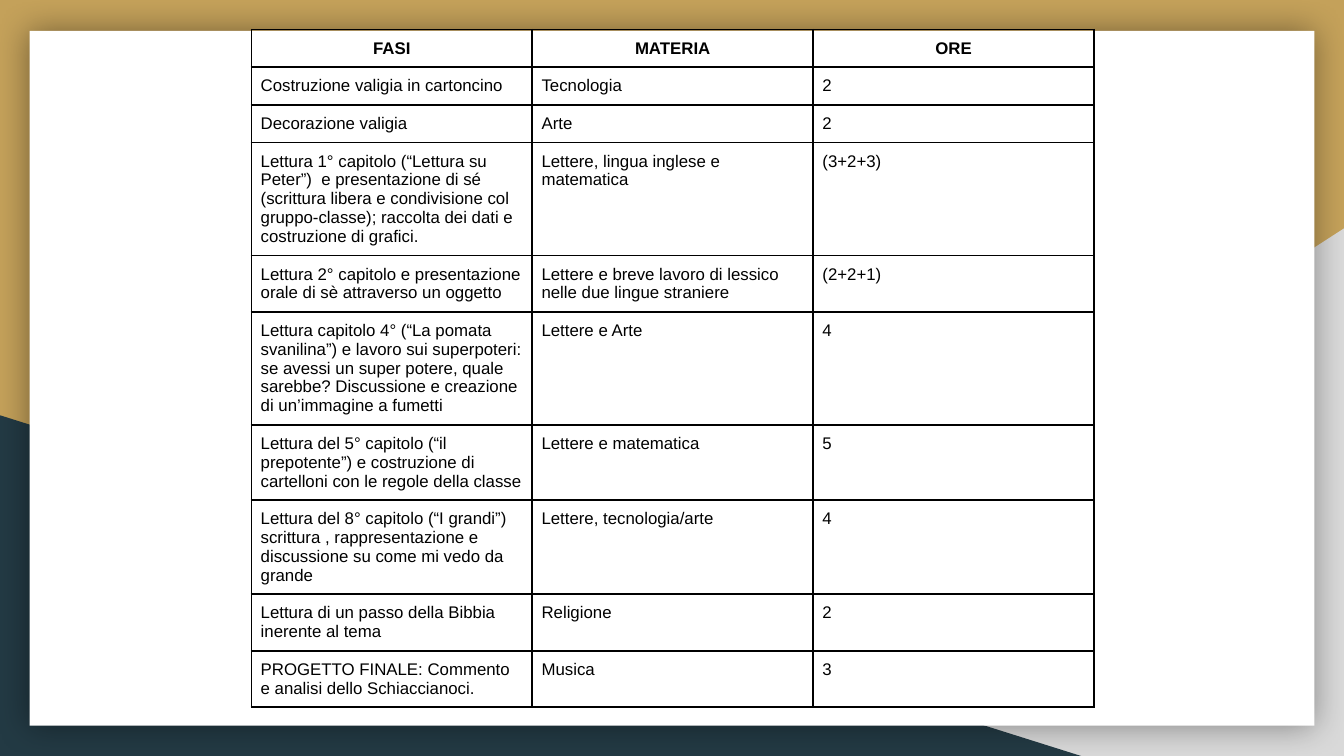
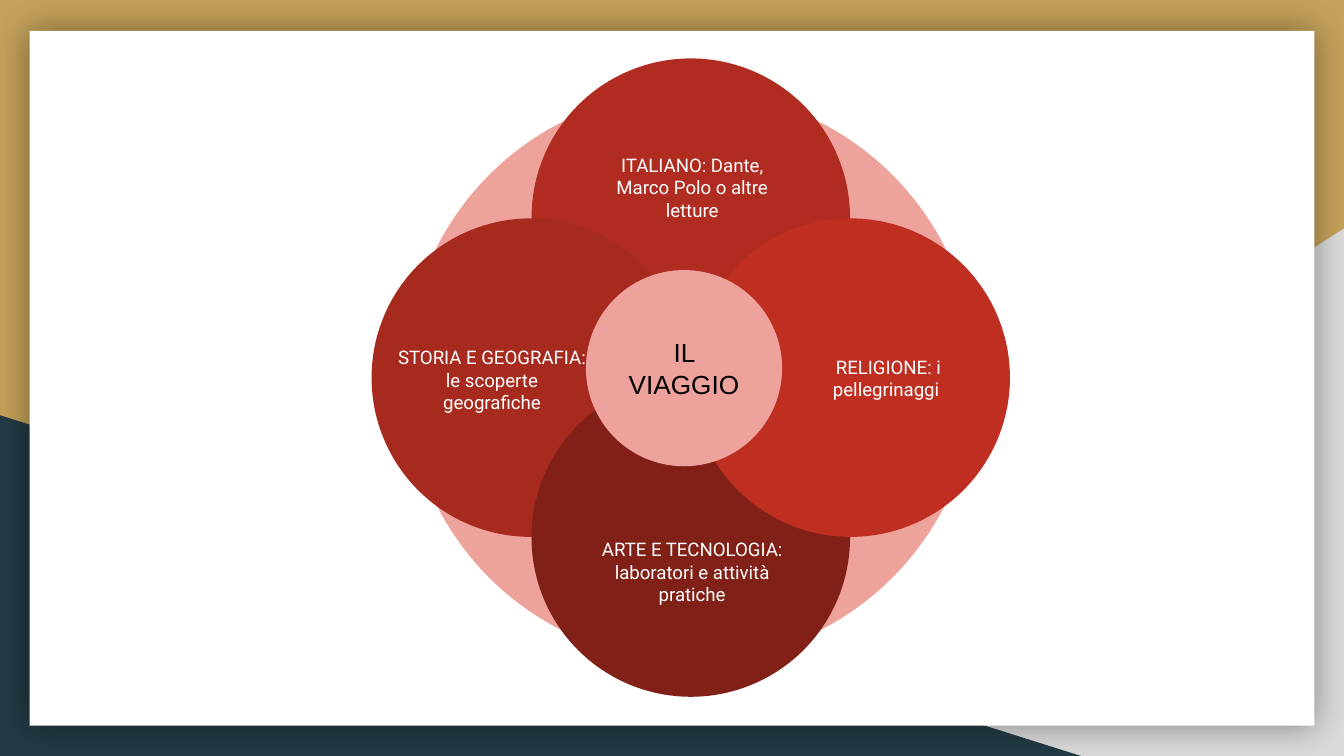
from dataclasses import dataclass

from lxml.etree import SubElement
from pptx import Presentation
from pptx.dml.color import RGBColor
from pptx.enum.shapes import MSO_SHAPE
from pptx.enum.text import MSO_ANCHOR, PP_ALIGN
from pptx.oxml import parse_xml
from pptx.oxml.ns import nsdecls, qn
from pptx.util import Inches, Pt


@dataclass(frozen=True)
class Theme:
    gold: str = "C4A15A"
    grey: str = "D9D9D9"
    navy: str = "233A44"
    white: str = "FFFFFF"
    black: str = "000000"
    pink: str = "EDA29B"
    table_font: str = "Arial"
    label_font: str = "Roboto"
    table_size: int = 9
    label_size: int = 10
    hub_size: int = 14


THEME = Theme()

HEADINGS = ("FASI", "MATERIA", "ORE")
PHASES = [
    ("Costruzione valigia in cartoncino", "Tecnologia", "2"),
    ("Decorazione valigia", "Arte", "2"),
    ("Lettura 1° capitolo (“Lettura su Peter”)  e presentazione di sé (scrittura libera e "
     "condivisione col gruppo-classe); raccolta dei dati e costruzione di grafici.",
     "Lettere, lingua inglese e matematica", "(3+2+3)"),
    ("Lettura 2° capitolo e presentazione orale di sè attraverso un oggetto",
     "Lettere e breve lavoro di lessico nelle due lingue straniere", "(2+2+1)"),
    ("Lettura capitolo 4° (“La pomata svanilina”) e lavoro sui superpoteri: se avessi un super "
     "potere, quale sarebbe? Discussione e creazione di un’immagine a fumetti",
     "Lettere e Arte", "4"),
    ("Lettura del 5° capitolo (“il prepotente”) e costruzione di cartelloni con le regole "
     "della classe", "Lettere e matematica", "5"),
    ("Lettura del 8° capitolo (“I grandi”) scrittura , rappresentazione e discussione su come "
     "mi vedo da grande", "Lettere, tecnologia/arte", "4"),
    ("Lettura di un passo della Bibbia inerente al tema", "Religione", "2"),
    ("PROGETTO FINALE: Commento e analisi dello Schiaccianoci.", "Musica", "3"),
]

HUB = "IL VIAGGIO"
PETALS = [
    ("ITALIANO: Dante, Marco Polo o altre letture", "B02C20", (0, -1), (4.33, 1.01)),
    ("STORIA E GEOGRAFIA: le scoperte geografiche", "A72A1E", (-1, 0), (2.84, 2.44)),
    ("ARTE E TECNOLOGIA: laboratori e attività pratiche", "802017", (0, 1), (4.33, 3.87)),
    ("RELIGIONE: i pellegrinaggi ", "BE2F22", (1, 0), (5.79, 2.43)),
]


def add_filled(shapes, preset, color, left, top, width, height):
    shape = shapes.add_shape(preset, Inches(left), Inches(top), Inches(width), Inches(height))
    shape.shadow.inherit = False
    shape.fill.solid()
    shape.fill.fore_color.rgb = RGBColor.from_string(color)
    shape.line.fill.background()
    return shape


def add_circle(shapes, color, center, diameter):
    left, top = (position - diameter / 2 for position in center)
    return add_filled(shapes, MSO_SHAPE.OVAL, color, left, top, diameter, diameter)


def style_paragraph(paragraph, font_name, size, color, alignment=PP_ALIGN.LEFT, bold=False):
    paragraph.alignment = alignment
    paragraph.font.name = font_name
    paragraph.font.size = Pt(size)
    paragraph.font.bold = bold
    paragraph.font.color.rgb = RGBColor.from_string(color)


def write_centered(shape, text, font_name, size, color):
    frame = shape.text_frame
    frame.text = text
    frame.word_wrap = True
    frame.vertical_anchor = MSO_ANCHOR.MIDDLE
    frame.margin_left = frame.margin_right = frame.margin_top = frame.margin_bottom = Inches(0.1)
    style_paragraph(frame.paragraphs[0], font_name, size, color, PP_ALIGN.CENTER)


def add_soft_shadow(shape):
    effects = shape.element.spPr.find(qn("a:effectLst"))
    shadow = SubElement(effects, qn("a:outerShdw"), blurRad=str(Pt(18)), dist="0",
                        dir="0", algn="ctr", rotWithShape="0")
    color = SubElement(shadow, qn("a:srgbClr"), val=THEME.black)
    SubElement(color, qn("a:alpha"), val="40000")


def decorate_layout(layout, slide):
    layout.background.fill.solid()
    layout.background.fill.fore_color.rgb = RGBColor.from_string(THEME.gold)
    right_corner = add_filled(slide.shapes, MSO_SHAPE.RIGHT_TRIANGLE, THEME.grey,
                              3.92, 1.7, 6.08, 3.93)
    right_corner.element.spPr.find(qn("a:xfrm")).set("flipH", "1")
    left_corner = add_filled(slide.shapes, MSO_SHAPE.RIGHT_TRIANGLE, THEME.navy,
                             0, 3.09, 8.06, 2.54)
    page = add_filled(slide.shapes, MSO_SHAPE.RECTANGLE, THEME.white, 0.22, 0.23, 9.56, 5.17)
    add_soft_shadow(page)
    for shape in (right_corner, left_corner, page):
        layout.shapes.element.append(shape.element)


def add_borders(cell):
    properties = cell._tc.get_or_add_tcPr()
    for index, side in enumerate(("lnL", "lnR", "lnT", "lnB")):
        properties.insert(index, parse_xml(
            f'<a:{side} {nsdecls("a")} w="{Pt(1)}"><a:solidFill>'
            f'<a:srgbClr val="{THEME.black}"/></a:solidFill></a:{side}>'))


def fill_cell(cell, text, is_heading):
    cell.text = text
    cell.fill.background()
    cell.margin_left = cell.margin_right = cell.margin_top = cell.margin_bottom = Inches(0.07)
    alignment = PP_ALIGN.CENTER if is_heading else PP_ALIGN.LEFT
    style_paragraph(cell.text_frame.paragraphs[0], THEME.table_font, THEME.table_size,
                    THEME.black, alignment, is_heading)
    add_borders(cell)


def build_phases(slide):
    rows = [HEADINGS, *PHASES]
    column_width, minimum_row_height = Inches(2.09), Inches(0.01)
    table = slide.shapes.add_table(
        len(rows), len(HEADINGS), Inches(1.87), Inches(0.22),
        column_width * len(HEADINGS), minimum_row_height * len(rows)).table
    table.first_row = table.horz_banding = False
    for row_index, row in enumerate(rows):
        for column_index, text in enumerate(row):
            fill_cell(table.cell(row_index, column_index), text, row_index == 0)


def build_journey(slide):
    center_x, center_y = 5.14, 2.81
    step = 1.19
    add_circle(slide.shapes, THEME.pink, (center_x, center_y - 0.01), 4.24)
    for text, color, (across, down), (left, top) in PETALS:
        group = slide.shapes.add_group_shape()
        add_circle(group.shapes, color, (center_x + across * step, center_y + down * step), 2.37)
        label = group.shapes.add_textbox(Inches(left), Inches(top), Inches(1.64), Inches(0.77))
        write_centered(label, text, THEME.label_font, THEME.label_size, THEME.white)
    hub = add_circle(slide.shapes, THEME.pink, (5.09, 2.74), 1.46)
    write_centered(hub, HUB, THEME.table_font, THEME.hub_size, THEME.black)


def main():
    presentation = Presentation()
    presentation.slide_width = Inches(10)
    presentation.slide_height = Inches(10) * 9 // 16
    layout = presentation.slide_layouts[6]
    phases_slide = presentation.slides.add_slide(layout)
    decorate_layout(layout, phases_slide)
    build_phases(phases_slide)
    build_journey(presentation.slides.add_slide(layout))
    presentation.save("out.pptx")


if __name__ == "__main__":
    main()
